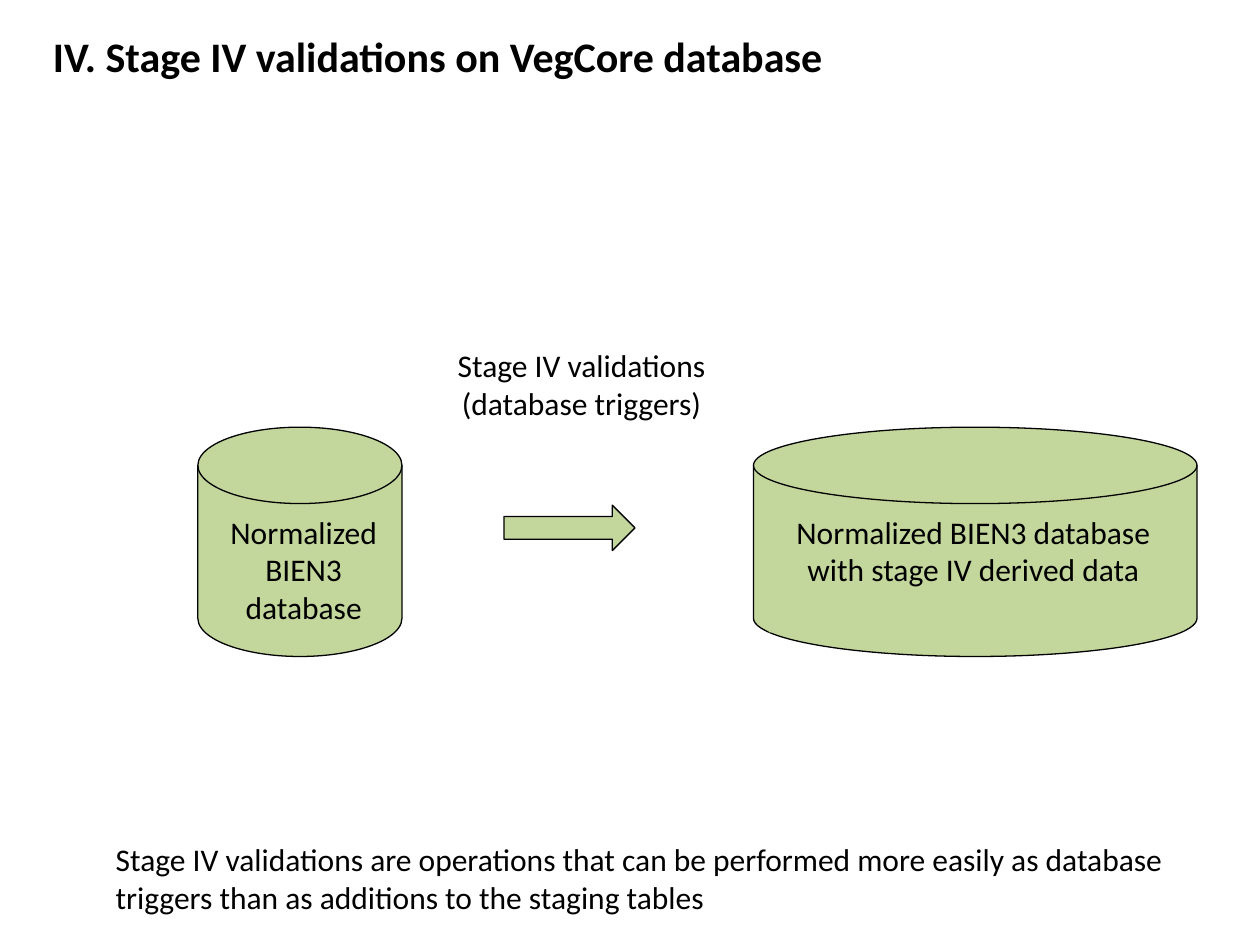
from dataclasses import dataclass

from pptx import Presentation
from pptx.dml.color import RGBColor
from pptx.enum.shapes import MSO_SHAPE
from pptx.enum.text import MSO_ANCHOR, PP_ALIGN
from pptx.shapes.autoshape import Shape
from pptx.slide import Slide
from pptx.util import Inches, Pt

CYLINDER = MSO_SHAPE.FLOWCHART_MAGNETIC_DISK
RECTANGLE = MSO_SHAPE.RECTANGLE
RIGHT_ARROW = MSO_SHAPE.RIGHT_ARROW
TOP = MSO_ANCHOR.TOP
LEFT = PP_ALIGN.LEFT
CENTER = PP_ALIGN.CENTER


@dataclass(frozen=True)
class Theme:
    font: str = "Calibri"
    ink: RGBColor = RGBColor(0x00, 0x00, 0x00)
    green: RGBColor = RGBColor(0xC3, 0xD6, 0x9B)
    title_size: Pt = Pt(24)
    body_size: Pt = Pt(18)
    outline: Pt = Pt(0.75)


@dataclass(frozen=True)
class Box:
    left: float
    top: float
    width: float
    height: float

    def lengths(self) -> tuple[Inches, ...]:
        return tuple(map(Inches, (self.left, self.top, self.width, self.height)))


@dataclass(frozen=True)
class Database:
    body: Box
    label: Box
    lines: tuple[str, ...]


THEME = Theme()
DISK_TOP, DISK_HEIGHT = 3.39, 1.82
LABEL_TOP, LABEL_HEIGHT = 4.02, 1.0

DATABASES = (
    Database(
        Box(1.57, DISK_TOP, 1.62, DISK_HEIGHT),
        Box(1.7, LABEL_TOP, 1.42, LABEL_HEIGHT),
        ("Normalized BIEN3 database",),
    ),
    Database(
        Box(5.98, DISK_TOP, 3.52, DISK_HEIGHT),
        Box(6.1, LABEL_TOP, 3.25, LABEL_HEIGHT),
        ("Normalized BIEN3 database", "with stage IV derived data"),
    ),
)


def write(shape: Shape, lines: tuple[str, ...], align: PP_ALIGN,
          size: Pt = THEME.body_size, bold: bool = False) -> None:
    frame = shape.text_frame
    frame.word_wrap = True
    frame.vertical_anchor = TOP
    frame.text = "\n".join(lines)
    for paragraph in frame.paragraphs:
        paragraph.alignment = align
        paragraph.font.name = THEME.font
        paragraph.font.size = size
        paragraph.font.bold = bold
        paragraph.font.color.rgb = THEME.ink


def add_green_shape(slide: Slide, kind: MSO_SHAPE, box: Box, outlined: bool = True) -> Shape:
    shape = slide.shapes.add_shape(kind, *box.lengths())
    shape.shadow.inherit = False
    shape.fill.solid()
    shape.fill.fore_color.rgb = THEME.green
    if outlined:
        shape.line.color.rgb = THEME.ink
        shape.line.width = THEME.outline
    else:
        shape.line.fill.background()
    return shape


def add_database(slide: Slide, database: Database) -> None:
    add_green_shape(slide, CYLINDER, database.body)
    label = add_green_shape(slide, RECTANGLE, database.label, outlined=False)
    write(label, database.lines, CENTER)


def add_text(slide: Slide, box: Box, lines: tuple[str, ...], align: PP_ALIGN) -> None:
    write(slide.shapes.add_textbox(*box.lengths()), lines, align)


def set_title(slide: Slide, box: Box, text: str) -> None:
    title = slide.shapes.title
    title.left, title.top, title.width, title.height = box.lengths()
    write(title, (text,), LEFT, THEME.title_size, bold=True)


def main() -> None:
    presentation = Presentation()
    presentation.slide_width = Inches(10)
    presentation.slide_height = Inches(7.5)
    slide = presentation.slides.add_slide(presentation.slide_layouts[5])

    set_title(slide, Box(0.32, 0.19, 9.14, 0.5),
              "IV. Stage IV validations on VegCore database")
    for database in DATABASES:
        add_database(slide, database)
    add_green_shape(slide, RIGHT_ARROW, Box(4, 4.01, 1.04, 0.36))
    add_text(slide, Box(3.44, 2.7, 2.35, 0.7),
             ("Stage IV validations", "(database triggers)"), CENTER)
    add_text(slide, Box(0.82, 6.62, 8.97, 0.7),
             ("Stage IV validations are operations that can be performed more easily "
              "as database triggers than as additions to the staging tables",), LEFT)

    presentation.save("out.pptx")


if __name__ == "__main__":
    main()
